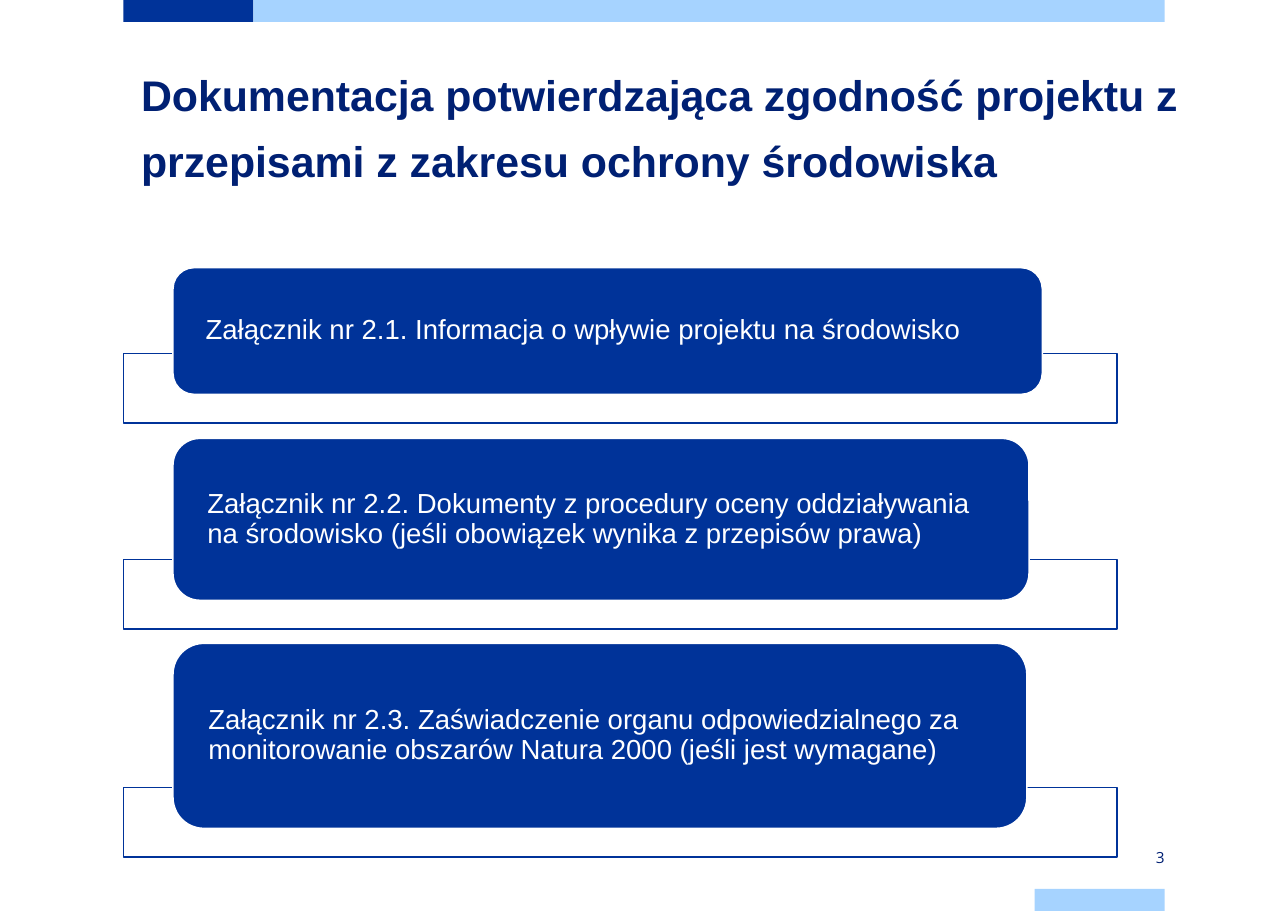
import pptx
import pptx.dml.color
import pptx.enum.shapes
import pptx.enum.text
import pptx.util

Inches = pptx.util.Inches
Pt = pptx.util.Pt
SHAPES = pptx.enum.shapes.MSO_SHAPE
ANCHOR = pptx.enum.text.MSO_ANCHOR
ALIGN = pptx.enum.text.PP_ALIGN

# Content
TITLE = "Dokumentacja potwierdzająca zgodność projektu z przepisami z zakresu ochrony środowiska"
PAGE_NUMBER = "3"
# text, top of the card, width, height
ATTACHMENTS = [
    ("Załącznik nr 2.1. Informacja o wpływie projektu na środowisko",
     2.43, 7.89, 1.15),
    ("Załącznik nr 2.2. Dokumenty z procedury oceny oddziaływania na środowisko "
     "(jeśli obowiązek wynika z przepisów prawa)",
     3.98, 7.77, 1.47),
    ("Załącznik nr 2.3. Zaświadczenie organu odpowiedzialnego za monitorowanie "
     "obszarów Natura 2000 (jeśli jest wymagane)",
     5.84, 7.75, 1.68),
]

# Style and layout
BLUE, LIGHT_BLUE, NAVY, WHITE = "003399", "A6D3FF", "002073", "FFFFFF"
PAGE_WIDTH, PAGE_HEIGHT = 11.69, 8.27
LEFT, BAR_WIDTH, BAR_HEIGHT = 1.12, 1.18, 0.2
BAR_RIGHT = 9.39
CARD_LEFT = 1.57
FRAME_WIDTH, FRAME_HEIGHT = 9.02, 0.63
FRAME_OVERLAP = 0.37
BARS = [
    (LEFT, 0, BAR_WIDTH, BLUE),
    (LEFT + BAR_WIDTH, 0, 8.27, LIGHT_BLUE),
    (BAR_RIGHT, PAGE_HEIGHT - BAR_HEIGHT, BAR_WIDTH, LIGHT_BLUE),
]


def color(value):
    return pptx.dml.color.RGBColor.from_string(value)


def add_block(kind, left, top, width, height, fill, line=None):
    block = page.shapes.add_shape(
        kind, Inches(left), Inches(top), Inches(width), Inches(height))
    block.shadow.inherit = False
    block.fill.solid()
    block.fill.fore_color.rgb = color(fill)
    if line:
        block.line.color.rgb = color(line)
        block.line.width = Pt(1)
    else:
        block.line.fill.background()
    return block


def write(box, text, size, font, ink, anchor, side=0, edge=0, align=ALIGN.LEFT, bold=False):
    frame = box.text_frame
    frame.word_wrap = True
    frame.auto_size = pptx.enum.text.MSO_AUTO_SIZE.NONE
    frame.vertical_anchor = anchor
    frame.margin_left = frame.margin_right = Inches(side)
    frame.margin_top = frame.margin_bottom = Inches(edge)
    para = frame.paragraphs[0]
    para.alignment = align
    span = para.add_run()
    span.text = text
    span.font.size = Pt(size)
    span.font.name = font
    span.font.bold = bold
    span.font.color.rgb = color(ink)
    return para


deck = pptx.Presentation()
deck.slide_width, deck.slide_height = Inches(PAGE_WIDTH), Inches(PAGE_HEIGHT)
page = deck.slides.add_slide(deck.slide_layouts.get_by_name("Title Only"))

# Decorative bars
for left, top, width, fill in BARS:
    add_block(SHAPES.RECTANGLE, left, top, width, BAR_HEIGHT, fill)

# Title
title = page.shapes.title
title.left, title.top = Inches(1.28), Inches(0.48)
title.width, title.height = Inches(9.45), Inches(1.18)
heading = write(title, TITLE, 28, "Arial", NAVY, ANCHOR.TOP, bold=True)
heading.line_spacing = 1.3
heading.space_before = Pt(0)
heading.space_after = Pt(12)

# Page number
number = page.shapes.add_textbox(
    Inches(BAR_RIGHT), Inches(7.68), Inches(BAR_WIDTH), Inches(0.2))
write(number, PAGE_NUMBER, 10, "Open Sans", NAVY, ANCHOR.MIDDLE, edge=0.08, align=ALIGN.RIGHT)

# Attachment cards, each over the top edge of its frame
for text, top, width, height in ATTACHMENTS:
    add_block(SHAPES.RECTANGLE, LEFT, top + height - FRAME_OVERLAP,
              FRAME_WIDTH, FRAME_HEIGHT, WHITE, BLUE)
    card = add_block(SHAPES.ROUNDED_RECTANGLE, CARD_LEFT, top, width, height, BLUE, WHITE)
    write(card, text, 18, "Arial", WHITE, ANCHOR.MIDDLE, side=0.24).line_spacing = 0.9

deck.save("out.pptx")
